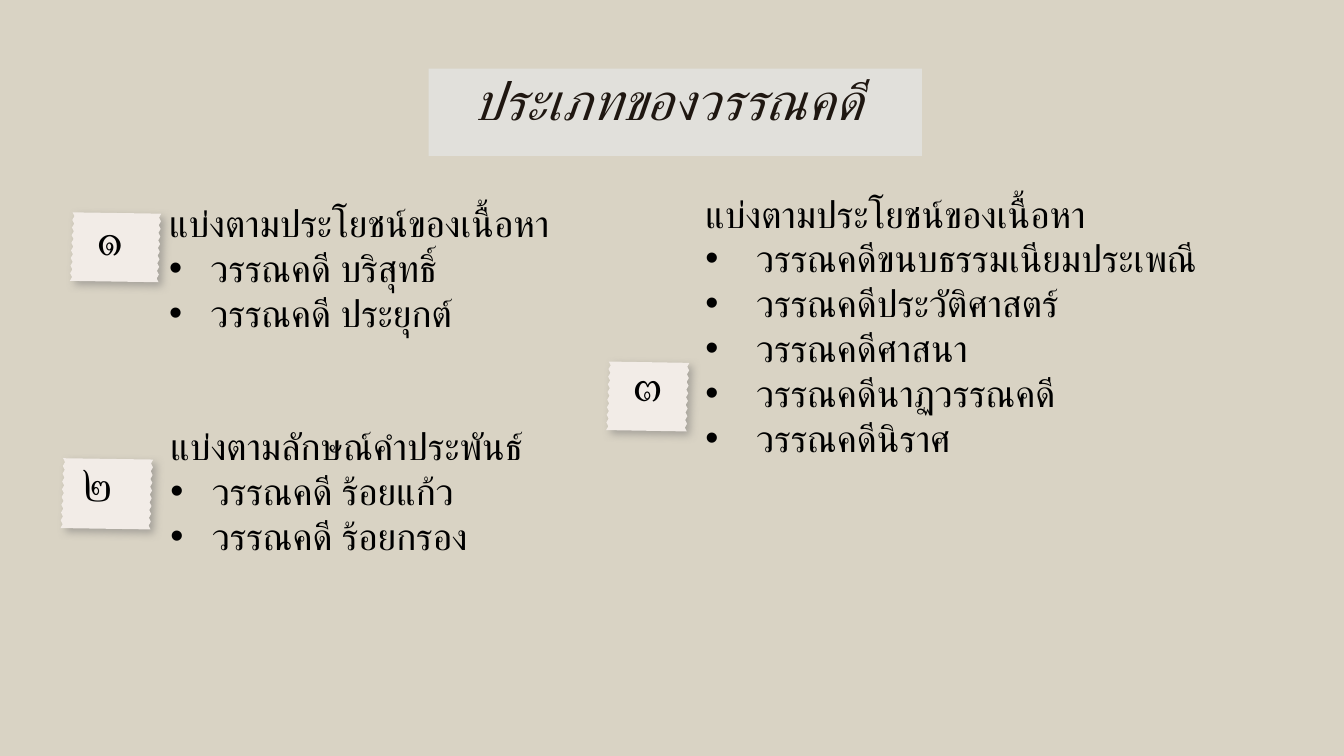
import pptx
import pptx.util
import pptx.dml.color
import pptx.enum.shapes
import pptx.enum.text
import pptx.oxml
import pptx.oxml.ns

Inches = pptx.util.Inches
RGBColor = pptx.dml.color.RGBColor
SAND = RGBColor(0xD9, 0xD3, 0xC4)
GREY = RGBColor(0xE1, 0xE0, 0xDB)
PAPER = RGBColor(0xF2, 0xEC, 0xE7)
SHADE = RGBColor(0x74, 0x73, 0x73)
BROWN = RGBColor(0x1F, 0x17, 0x11)
BLACK = RGBColor(0, 0, 0)

HEAD = {"name": "DejaVu Sans Mono", "size": pptx.util.Pt(28), "italic": True}
DIGIT = {"name": "Arial", "size": pptx.util.Pt(28)}
BODY = {"name": "Arial", "size": pptx.util.Pt(20)}

TAPES = [
    ("๑", (0.52, 1.58, 0.68, 0.52), (0.1, -0.12)),
    ("๓", (4.51, 2.69, 0.62, 0.52), (0.1, -0.14)),
    ("๒", (0.45, 3.41, 0.69, 0.53), (0.07, -0.12)),
]
LISTS = [
    ((1.16, 1.44, 3.46, 1.51), 0.31, "แบ่งตามประโยชน์ของเนื้อหา",
     ["วรรณคดี บริสุทธิ์", "วรรณคดี ประยุกต์"]),
    ((1.17, 3.1, 3.43, 1.51), 0.31, "แบ่งตามลักษณ์คำประพันธ์",
     ["วรรณคดี ร้อยแก้ว", "วรรณคดี ร้อยกรอง"]),
    ((5.15, 1.37, 4.74, 3.6), 0.38, "แบ่งตามประโยชน์ของเนื้อหา",
     ["วรรณคดีขนบธรรมเนียมประเพณี", "วรรณคดีประวัติศาสตร์", "วรรณคดีศาสนา",
      "วรรณคดีนาฏวรรณคดี", "วรรณคดีนิราศ"]),
]


def make(xml):
    """Parse one drawing element."""
    return pptx.oxml.parse_xml(xml.replace(" ", f" {pptx.oxml.ns.nsdecls('a')} ", 1))


def style(item, form):
    """Set each attribute of item from the format values."""
    for key, value in form.items():
        setattr(item, key, value)


def write(para, text, form, color):
    """Add a run with its font and colour."""
    run = para.add_run()
    run.text = text
    style(run.font, form)
    run.font.color.rgb = color


def paint(shape, color):
    """Give a shape a plain fill with no line or shadow."""
    shape.shadow.inherit = False
    shape.fill.solid()
    shape.fill.fore_color.rgb = color
    shape.line.fill.background()


def add_text(slide, box):
    """Add a wrapping text box and return its frame."""
    frame = slide.shapes.add_textbox(*map(Inches, box)).text_frame
    frame.word_wrap = True
    return frame


def add_title(slide, box):
    """Draw the title band."""
    kind = pptx.enum.shapes.MSO_SHAPE.RECTANGLE
    band = slide.shapes.add_shape(kind, *map(Inches, box))
    paint(band, GREY)
    frame = band.text_frame
    style(frame, {
        "word_wrap": True, "margin_top": 0, "margin_left": Inches(0.1),
        "margin_right": Inches(0.1), "margin_bottom": Inches(0.1),
        "vertical_anchor": pptx.enum.text.MSO_ANCHOR.TOP,
    })
    para = frame.paragraphs[0]
    para.alignment = pptx.enum.text.PP_ALIGN.CENTER
    write(para, "ประเภทของวรรณคดี ", HEAD, BROWN)
    para.add_line_break()


def add_tape(slide, digit, box, shift):
    """Draw a tilted strip of paper with toothed sides and its digit."""
    left, top, wide, high = box
    teeth, deep, tilt, rise = 9, 0.015, 0.02, 0.01
    count = 2 * teeth + 1
    side = []
    for i in range(count):
        part = i / (count - 1)
        side.append((-tilt * part - deep * (i % 2), (high - rise) * part))
    right = [(left + wide + x, top + rise + y) for x, y in side]
    edge = [(left + tilt - tilt * i / (count - 1) + deep * (i % 2), top + y)
            for i, (x, y) in enumerate(side)]
    points = [(Inches(x), Inches(y)) for x, y in right + edge[::-1]]
    pen = slide.shapes.build_freeform(*points[0])
    pen.add_line_segments(points[1:], close=True)
    tape = pen.convert_to_shape()
    paint(tape, PAPER)
    glow = tape.element.spPr.find(pptx.oxml.ns.qn("a:effectLst"))
    glow.append(make(
        '<a:outerShdw blurRad="57150" dist="38100" dir="2580000" algn="bl" rotWithShape="0">'
        f'<a:srgbClr val="{SHADE}"><a:alpha val="50000"/></a:srgbClr></a:outerShdw>'))
    frame = add_text(slide, (left + shift[0], top + shift[1], 0.42, 0.76))
    write(frame.paragraphs[0], digit, DIGIT, BLACK)


def add_list(slide, box, indent, head, items):
    """Write a heading with bullets below it."""
    frame = add_text(slide, box)
    write(frame.paragraphs[0], head, BODY, BLACK)
    for item in items:
        para = frame.add_paragraph()
        write(para, item, BODY, BLACK)
        props = para._p.get_or_add_pPr()
        props.set("marL", str(Inches(indent)))
        props.set("indent", str(-Inches(indent)))
        props.append(make(f'<a:buClr ><a:srgbClr val="{BLACK}"/></a:buClr>'))
        props.append(make('<a:buFont typeface="Arial"/>'))
        props.append(make('<a:buChar char="•"/>'))


def main():
    """Build and save the slide."""
    deck = pptx.Presentation()
    wide = Inches(10)
    style(deck, {"slide_width": wide, "slide_height": wide * 9 // 16})
    slide = deck.slides.add_slide(deck.slide_layouts[6])
    slide.background.fill.solid()
    slide.background.fill.fore_color.rgb = SAND
    add_title(slide, (3.19, 0.51, 3.67, 0.65))
    for tape in TAPES:
        add_tape(slide, *tape)
    for group in LISTS:
        add_list(slide, *group)
    deck.save("out.pptx")


if __name__ == "__main__":
    main()
